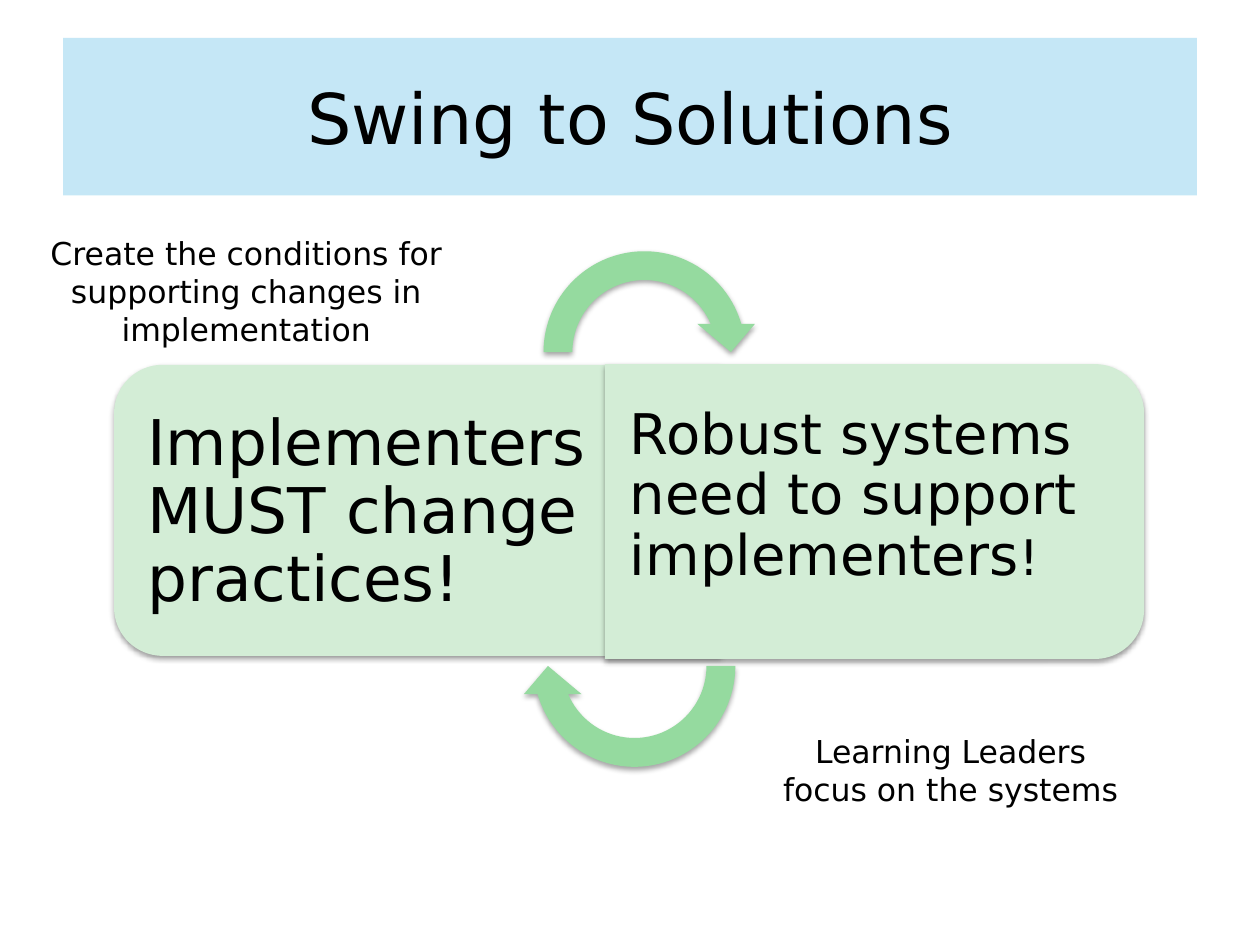
from lxml.etree import SubElement
from pptx import Presentation
from pptx.dml.color import RGBColor
from pptx.enum.shapes import MSO_SHAPE as Shape
from pptx.enum.text import MSO_ANCHOR as Anchor, PP_ALIGN as Align
from pptx.oxml.ns import qn
from pptx.util import Inches, Pt

FONT = "DejaVu Sans"


def paint(target, color, alpha=None):
    """Fill a shape or font with a solid colour, alpha in percent."""
    target.fill.solid()
    target.fill.fore_color.rgb = RGBColor.from_string(color)
    if alpha:
        srgb = target._element.spPr.find(qn("a:solidFill"))[0]
        SubElement(srgb, qn("a:alpha"), val=str(alpha * 1000))


def write(box, text, size, align):
    frame = box.text_frame
    frame.word_wrap = True
    frame.text = text
    for para in frame.paragraphs:
        para.alignment = align
        for span in para.runs:
            span.font.name = FONT
            span.font.size = Pt(size)
            paint(span.font, "000000")
    return frame


deck = Presentation()
deck.slide_width, deck.slide_height = Inches(10), Inches(7.5)
page = deck.slides.add_slide(deck.slide_layouts[5])

title = page.shapes.title
title.left, title.top, title.width, title.height = map(Inches, (0.5, 0.3, 9, 1.25))
paint(title, "AADDF3", alpha=68)
write(title, "Swing to Solutions", 40, Align.CENTER).vertical_anchor = Anchor.MIDDLE

# Two panels turned on their sides, then the two arrows that circle between them
PANEL = Shape.ROUND_2_SAME_RECTANGLE, (0.167, 0), "D3EDD6", 38, 1.6
ARROW = Shape.CIRCULAR_ARROW, (0.125, 11.423, 204.577, 108, 0.125), "95DA9F", 35, 1.8
panel_texts = {
    270: ("Implementers MUST change practices!", 36,
          (1.02, 3.01, 4.71, 2.08), (0.15, 0.25, 0.23, 0.25)),
    90: ("Robust systems need to support implementers!", 32,
         (4.8, 3, 4.16, 2.11), (0.2, 0.22, 0.13, 0.22)),
}
for (kind, adjustments, color, shade, distance), place, turn in (
    (PANEL, (2.16, 1.64, 2.31, 4.82), 270),
    (PANEL, (5.77, 1.92, 2.34, 4.28), 90),
    (ARROW, (4.2, 1.88, 1.83, 1.83), 0),
    (ARROW, (4.12, 4.37, 1.83, 1.83), 180),
):
    shape = page.shapes.add_shape(kind, *map(Inches, place))
    shape.rotation = turn
    for index, value in enumerate(adjustments):
        shape.adjustments[index] = value
    paint(shape, color)
    shape.line.fill.background()
    shape.shadow.inherit = False
    effects = shape._element.spPr.find(qn("a:effectLst"))
    shadow = SubElement(effects, qn("a:outerShdw"), blurRad=str(Pt(3.1)),
                        dist=str(Pt(distance)), dir="5400000", rotWithShape="0")
    black = SubElement(shadow, qn("a:srgbClr"), val="000000")
    SubElement(black, qn("a:alpha"), val=str(shade * 1000))

    if turn in panel_texts:
        text, size, area, insets = panel_texts[turn]
        box = page.shapes.add_textbox(*map(Inches, area))
        frame = write(box, text, size, Align.LEFT)
        (frame.margin_left, frame.margin_top,
         frame.margin_right, frame.margin_bottom) = map(Inches, insets)
        frame.paragraphs[0].line_spacing = 0.9

# The closing mark of the right panel is a little smaller
para = frame.paragraphs[0]
para.runs[0].text = para.text.rstrip("!")
mark = para.add_run()
mark.text = "!"
mark.font.name, mark.font.size = FONT, Pt(28)
paint(mark.font, "000000")

for text, place in (
    ("Create the conditions for supporting changes in implementation",
     (0, 1.81, 3.91, 1.01)),
    ("Learning Leaders\nfocus on the systems", (5.59, 5.76, 3.91, 0.71)),
):
    caption = page.shapes.add_textbox(*map(Inches, place))
    write(caption, text, 18, Align.CENTER)

deck.save("out.pptx")
